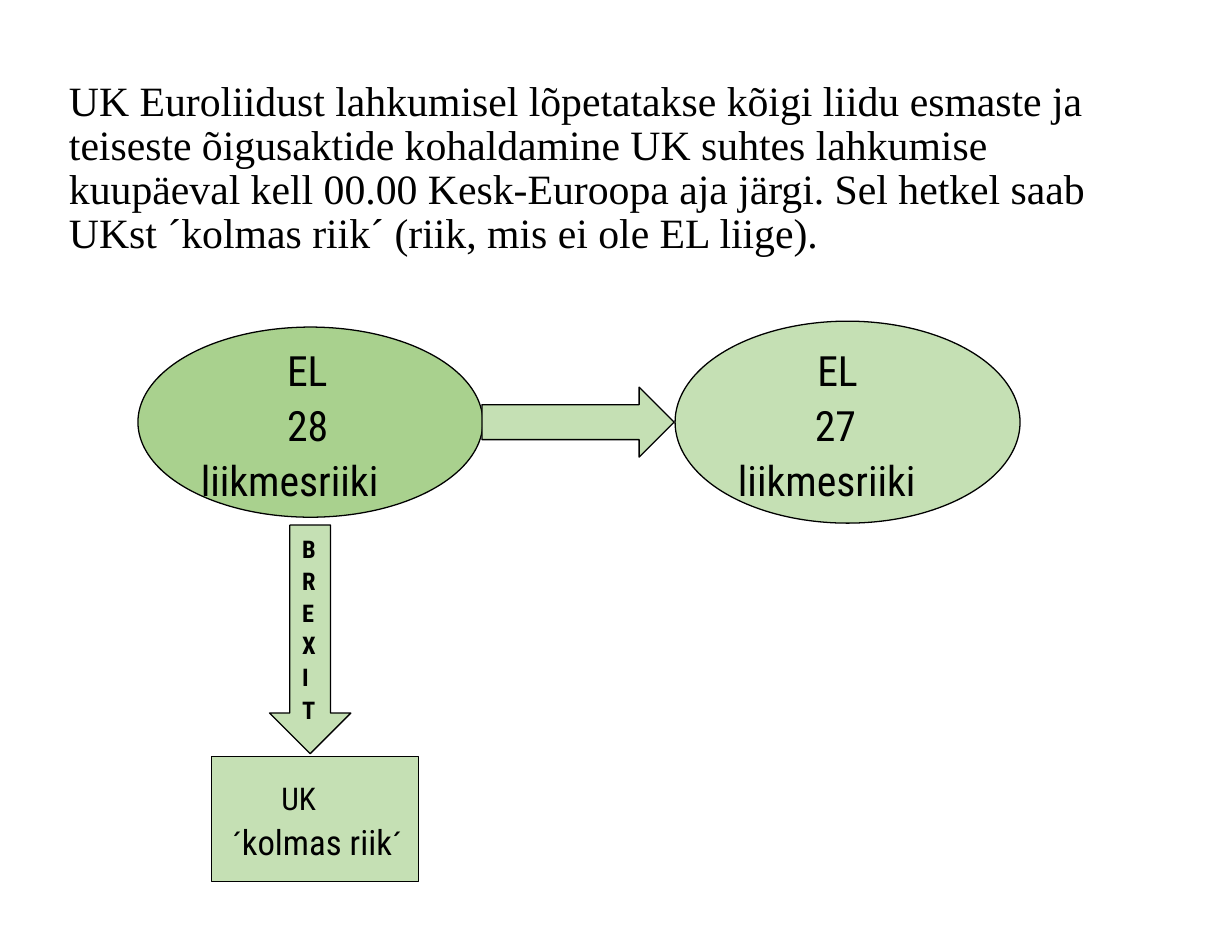
import pptx
import pptx.util
import pptx.dml.color
import pptx.enum.shapes
import pptx.enum.text

Cm, Pt = pptx.util.Cm, pptx.util.Pt
RGB = pptx.dml.color.RGBColor.from_string
KIND = pptx.enum.shapes.MSO_SHAPE
ANCHOR = pptx.enum.text.MSO_ANCHOR
ALIGN = pptx.enum.text.PP_ALIGN

COLORS = {"ink": "000000", "full": "A9D18E", "light": "C5E0B4"}
SANS = "Roboto Condensed"


def write(frame, lines, face, space, bold=False):
    """Each line is an indent in cm and a list of (text, size) runs."""
    frame.word_wrap = True
    for num, (indent, runs) in enumerate(lines):
        para = frame.add_paragraph() if num else frame.paragraphs[0]
        para.alignment = ALIGN.LEFT
        para.line_spacing = space
        if indent:
            para._p.get_or_add_pPr().set("marL", str(Cm(indent)))
        for text, size in runs:
            run = para.add_run()
            run.text = text
            font = {"name": face, "size": Pt(size), "bold": bold}
            for key, value in font.items():
                setattr(run.font, key, value)
            run.font.color.rgb = RGB(COLORS["ink"])


# Slide
deck = pptx.Presentation()
deck.slide_width, deck.slide_height = Cm(25), Cm(19)
slide = deck.slides.add_slide(deck.slide_layouts[6])

# Heading
head = slide.shapes.add_textbox(Cm(1.4), Cm(1.5), Cm(22), Cm(4.7)).text_frame
margins = {"left": 0, "top": 0.15, "right": 0, "bottom": 0}
for side, size in margins.items():
    setattr(head, "margin_" + side, Cm(size))
title = (
    "UK Euroliidust lahkumisel lõpetatakse kõigi liidu esmaste ja teiseste "
    "õigusaktide kohaldamine UK suhtes lahkumise kuupäeval kell 00.00 "
    "Kesk-Euroopa aja järgi. Sel hetkel saab UKst ´kolmas riik´ "
    "(riik, mis ei ole EL liige)."
)
write(head, [(0, [(title, 24)])], "Times New Roman", 0.88)

# Text of the nodes
before = [(1.75, [("EL", 24)]), (1.75, [("28", 24)]), (0, [("liikmesriiki", 24)])]
after = [(1.61, [("EL", 24)]), (1.56, [("27", 24)]), (0, [("liikmesriiki", 24)])]
brexit = [(0, [("BREXIT", 14)])]
third = [(1.16, [("UK", 18)]),
         (0.16, [("´", 18), ("kolmas riik", 20), ("´", 18)])]

# Nodes and block arrows: kind, box in cm, fill, lines, anchor, bold
nodes = [
    (KIND.OVAL, (2.8, 6.64, 7, 3.86), "full", before, ANCHOR.MIDDLE, False),
    (KIND.RIGHT_ARROW, (9.78, 7.86, 3.9, 1.42), "light", [], ANCHOR.MIDDLE, False),
    (KIND.DOWN_ARROW, (5.47, 10.66, 1.65, 4.64), "light", brexit, ANCHOR.TOP, True),
    (KIND.RECTANGLE, (4.3, 15.36, 4.19, 2.54), "light", third, ANCHOR.MIDDLE, False),
    (KIND.OVAL, (13.7, 6.52, 7, 4.1), "light", after, ANCHOR.MIDDLE, False),
]
for kind, box, fill, lines, anchor, bold in nodes:
    node = slide.shapes.add_shape(kind, *map(Cm, box))
    node.shadow.inherit = False
    node.fill.solid()
    node.fill.fore_color.rgb = RGB(COLORS[fill])
    node.line.color.rgb = RGB(COLORS["ink"])
    node.line.width = Pt(0.75)
    if lines:
        node.text_frame.vertical_anchor = anchor
        write(node.text_frame, lines, SANS, 1.1, bold)

deck.save("out.pptx")
